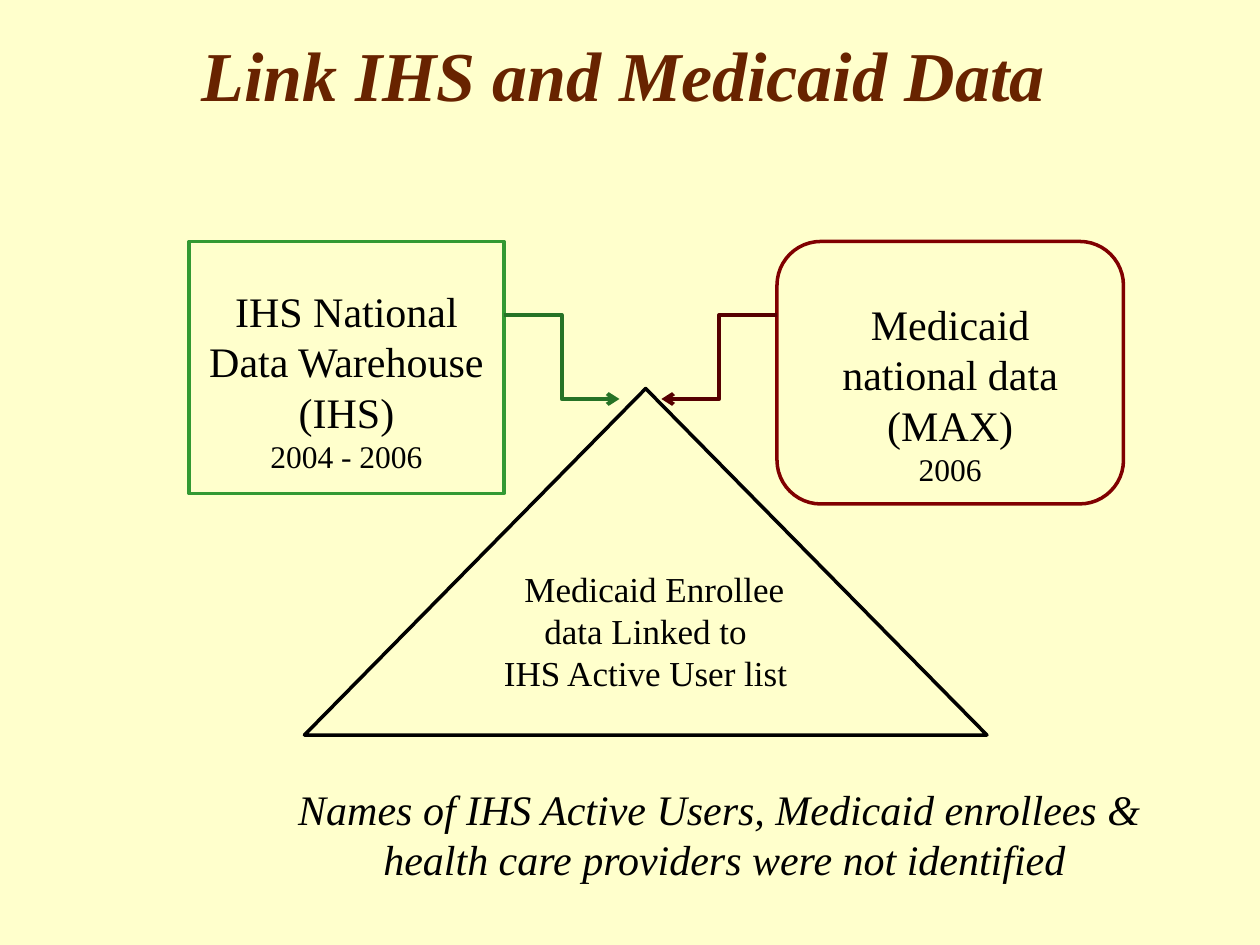
from dataclasses import dataclass

from lxml import etree
from pptx import Presentation
from pptx.dml.color import RGBColor
from pptx.enum.shapes import MSO_CONNECTOR, MSO_SHAPE
from pptx.enum.text import MSO_ANCHOR, MSO_AUTO_SIZE, PP_ALIGN
from pptx.oxml.ns import qn
from pptx.util import Inches, Pt

RECTANGLE = MSO_SHAPE.RECTANGLE
ROUNDED = MSO_SHAPE.ROUNDED_RECTANGLE
TRIANGLE = MSO_SHAPE.ISOSCELES_TRIANGLE
ELBOW = MSO_CONNECTOR.ELBOW
TOP, MIDDLE = MSO_ANCHOR.TOP, MSO_ANCHOR.MIDDLE
LEFT, CENTER = PP_ALIGN.LEFT, PP_ALIGN.CENTER
FIXED_SIZE = MSO_AUTO_SIZE.NONE

FONT = "Times New Roman"
BACKGROUND = "FFFFCC"
BLACK = "000000"
COLUMNS, ROWS = 120, 90
CELL = Inches(10) // COLUMNS


@dataclass
class Line:
    text: str
    size: int
    color: str = BLACK
    bold: bool = False
    italic: bool = False
    indent: float = 0


@dataclass
class Box:
    preset: int
    area: tuple[int, int, int, int]
    outline: str
    lines: list[Line]
    top_inset: float = 0.05


@dataclass
class Arrow:
    start: tuple[int, int]
    end: tuple[int, int]
    color: str


BOXES = [
    Box(RECTANGLE, (18, 23, 30, 24), "339933",
        [Line("IHS National Data Warehouse (IHS)", 24), Line("2004 - 2006", 18)], 0.35),
    Box(ROUNDED, (74, 23, 33, 25), "800000",
        [Line("Medicaid national data (MAX)", 24), Line("2006", 18)], 0.35),
    Box(TRIANGLE, (29, 37, 65, 33), BLACK,
        [Line("Medicaid Enrollee", 20, indent=0.14), Line("data Linked to", 20),
         Line("IHS Active User list", 20)]),
]
ARROWS = [
    Arrow((48, 30), (59, 38), "267326"),
    Arrow((74, 30), (63, 38), "560000"),
]
TITLE = [Line("Link IHS and Medicaid Data", 40, "682300", bold=True, italic=True)]
FOOTNOTE = [
    Line("Names of IHS Active Users, Medicaid enrollees & ", 24, italic=True),
    Line("health care providers were not identified", 24, italic=True),
]


def rgb(color: str) -> RGBColor:
    return RGBColor.from_string(color)


def cells(*counts: int) -> list[int]:
    return [count * CELL for count in counts]


def write_lines(frame, lines: list[Line], alignment=CENTER, anchor=TOP) -> None:
    frame.word_wrap = True
    frame.auto_size = FIXED_SIZE
    frame.vertical_anchor = anchor
    for index, line in enumerate(lines):
        paragraph = frame.add_paragraph() if index else frame.paragraphs[0]
        paragraph.alignment = alignment
        if line.indent:
            paragraph._p.get_or_add_pPr().set("marL", str(Inches(line.indent)))
        run = paragraph.add_run()
        run.text = line.text
        font = run.font
        font.name, font.size = FONT, Pt(line.size)
        font.bold, font.italic = line.bold, line.italic
        font.color.rgb = rgb(line.color)


def draw_title(slide) -> None:
    title = slide.shapes.title
    title.left, title.top, title.width, title.height = cells(18, 5, 102, 4)
    write_lines(title.text_frame, TITLE, LEFT, MIDDLE)


def draw_box(slide, box: Box) -> None:
    shape = slide.shapes.add_shape(box.preset, *cells(*box.area))
    shape.shadow.inherit = False
    shape.fill.solid()
    shape.fill.fore_color.rgb = rgb(BACKGROUND)
    shape.line.color.rgb = rgb(box.outline)
    shape.line.width = Pt(2)
    shape.text_frame.margin_top = Inches(box.top_inset)
    write_lines(shape.text_frame, box.lines)


def draw_arrow(slide, arrow: Arrow) -> None:
    connector = slide.shapes.add_connector(ELBOW, *cells(*arrow.start, *arrow.end))
    connector.line.color.rgb = rgb(arrow.color)
    connector.line.width = Pt(2.25)
    etree.SubElement(connector.line._get_or_add_ln(), qn("a:tailEnd"), type="arrow")
    etree.SubElement(connector._element.spPr, qn("a:effectLst"))


def main() -> None:
    presentation = Presentation()
    presentation.slide_width = COLUMNS * CELL
    presentation.slide_height = ROWS * CELL
    slide = presentation.slides.add_slide(presentation.slide_layouts[5])
    slide.background.fill.solid()
    slide.background.fill.fore_color.rgb = rgb(BACKGROUND)

    draw_title(slide)
    for box in BOXES[:2]:
        draw_box(slide, box)
    for arrow in ARROWS:
        draw_arrow(slide, arrow)
    draw_box(slide, BOXES[2])
    footnote = slide.shapes.add_textbox(*cells(16, 74, 106, 11))
    write_lines(footnote.text_frame, FOOTNOTE)

    presentation.save("out.pptx")


if __name__ == "__main__":
    main()
